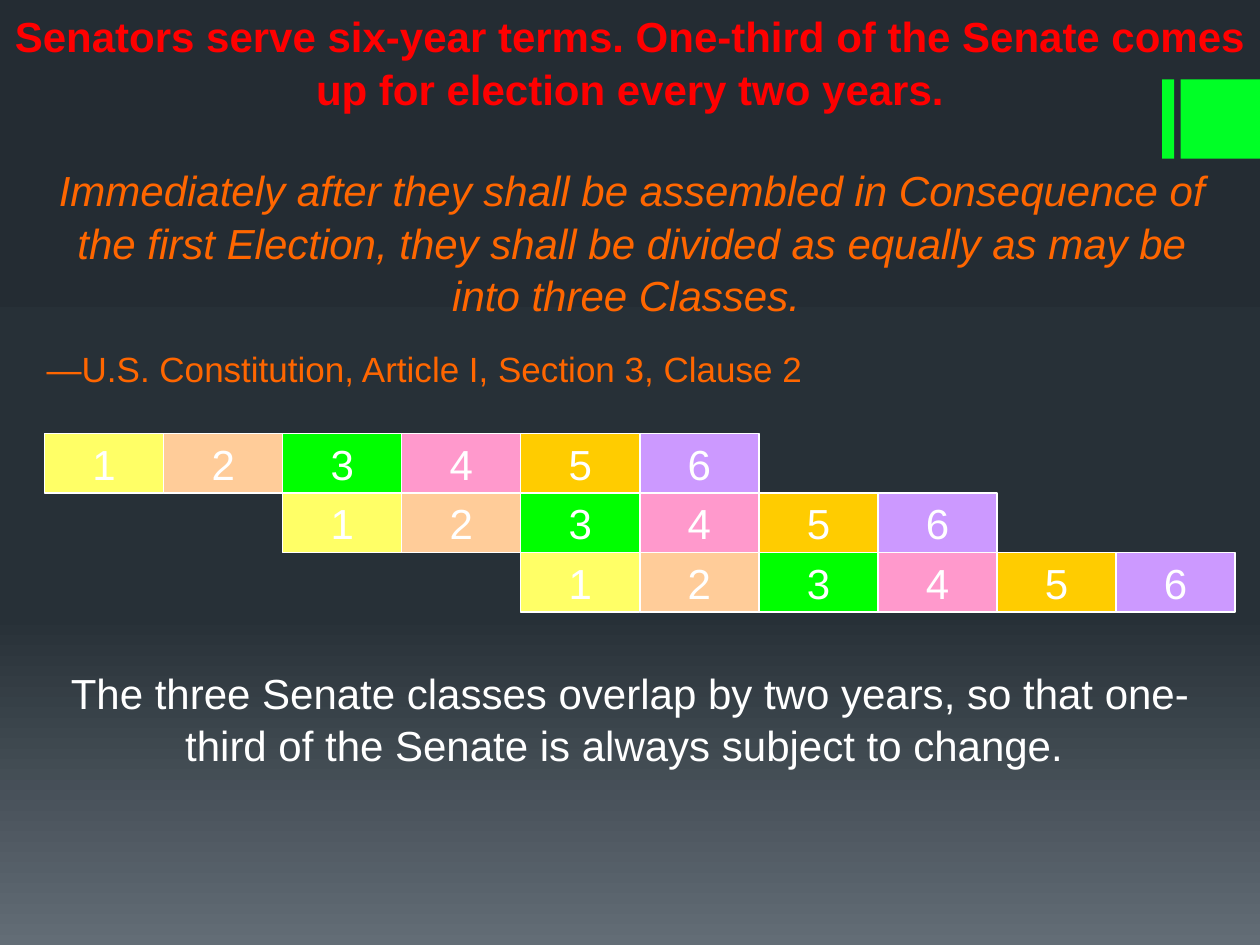
from copy import deepcopy
from dataclasses import dataclass

from pptx import Presentation
from pptx.dml.color import RGBColor
from pptx.enum.shapes import MSO_SHAPE
from pptx.enum.text import MSO_ANCHOR, PP_ALIGN
from pptx.util import Cm, Pt


@dataclass(frozen=True)
class Theme:
    font: str = "Arial"
    body: int = 24
    source: int = 20
    white: str = "FFFFFF"
    title: str = "FF0000"
    quote: str = "FF6600"
    accent: str = "00FF26"
    backdrop: tuple = ((0, "242C33"), (0.65, "273037"), (1, "636D76"))
    years: tuple = ("FFFF66", "FFCC99", "00FF00", "FF99CC", "FFCC00", "CC99FF")


T = Theme()


def write(p, text, color, size=T.body, align=PP_ALIGN.CENTER, **style):
    p.alignment = align
    r = p.add_run()
    r.text = text
    r.font.color.rgb = RGBColor.from_string(color)
    for name, value in {"name": T.font, "size": Pt(size), **style}.items():
        setattr(r.font, name, value)


def add_rect(shapes, x, y, w, h, color):
    sp = shapes.add_shape(MSO_SHAPE.RECTANGLE, Cm(x), Cm(y), Cm(w), Cm(h))
    sp.shadow.inherit = False
    sp.fill.solid()
    sp.fill.fore_color.rgb = RGBColor.from_string(color)
    sp.line.fill.background()
    return sp


prs = Presentation()
prs.slide_width, prs.slide_height = Cm(25.4), Cm(19.05)
s = prs.slides.add_slide(prs.slide_layouts[6])

# Background: three-stop vertical gradient
fill = s.background.fill
fill.gradient()
fill.gradient_angle = 270
stop_list = fill.gradient_stops[0]._gs.getparent()
stop_list.append(deepcopy(stop_list[-1]))
for stop, (position, color) in zip(fill.gradient_stops, T.backdrop):
    stop.position = position
    stop.color.rgb = RGBColor.from_string(color)

# Accent bars at the right edge
for x, w in ((23.43, 0.24), (23.8, 1.6)):
    add_rect(s.shapes, x, 1.6, w, 1.6, T.accent)

# Quotation, title and conclusion
quote = ("Immediately after they shall be assembled in Consequence of the first "
         "Election, they shall be divided as equally as may be into three Classes. ")
title = ("Senators serve six-year terms. One-third of the Senate comes up for "
         "election every two years.")
conclusion = ("The three Senate classes overlap by two years, so that one-third "
              "of the Senate is always subject to change. ")
frames = []
for box, text, color, style in (
    ((0.69, 3.1, 24.1, 4.88), quote, T.quote, {"italic": True}),
    ((0, 0, 25.4, 2.31), title, T.title, {"bold": True}),
    ((0.5, 13.23, 24.4, 3.3), conclusion, T.white, {}),
):
    tf = s.shapes.add_textbox(*map(Cm, box)).text_frame
    tf.word_wrap = True
    tf.margin_top = Cm(0.18)
    p = tf.paragraphs[0]
    p.line_spacing = 1.04
    write(p, text, color, **style)
    frames.append(tf)

# Source line below the quotation
p = frames[0].add_paragraph()
p.space_before = Pt(16)
write(p, "—U.S. Constitution, Article I, Section 3, Clause 2", T.quote,
      T.source, PP_ALIGN.LEFT)

# Three six-year terms, each starting two years after the one above
left, top, year_w, row_h, shift = 0.9, 8.74, 2.4, 1.2, 2
cell_format = {"word_wrap": False, "vertical_anchor": MSO_ANCHOR.MIDDLE}
for row in range(3):
    term = s.shapes.add_group_shape()
    for year, color in enumerate(T.years):
        sp = add_rect(term.shapes, left + (row * shift + year) * year_w,
                      top + row * row_h, year_w, row_h, color)
        sp.line.color.rgb = RGBColor.from_string(T.white)
        sp.line.width = Pt(0.75)
        tf = sp.text_frame
        for name, value in cell_format.items():
            setattr(tf, name, value)
        write(tf.paragraphs[0], str(year + 1), T.white)

prs.save("out.pptx")
